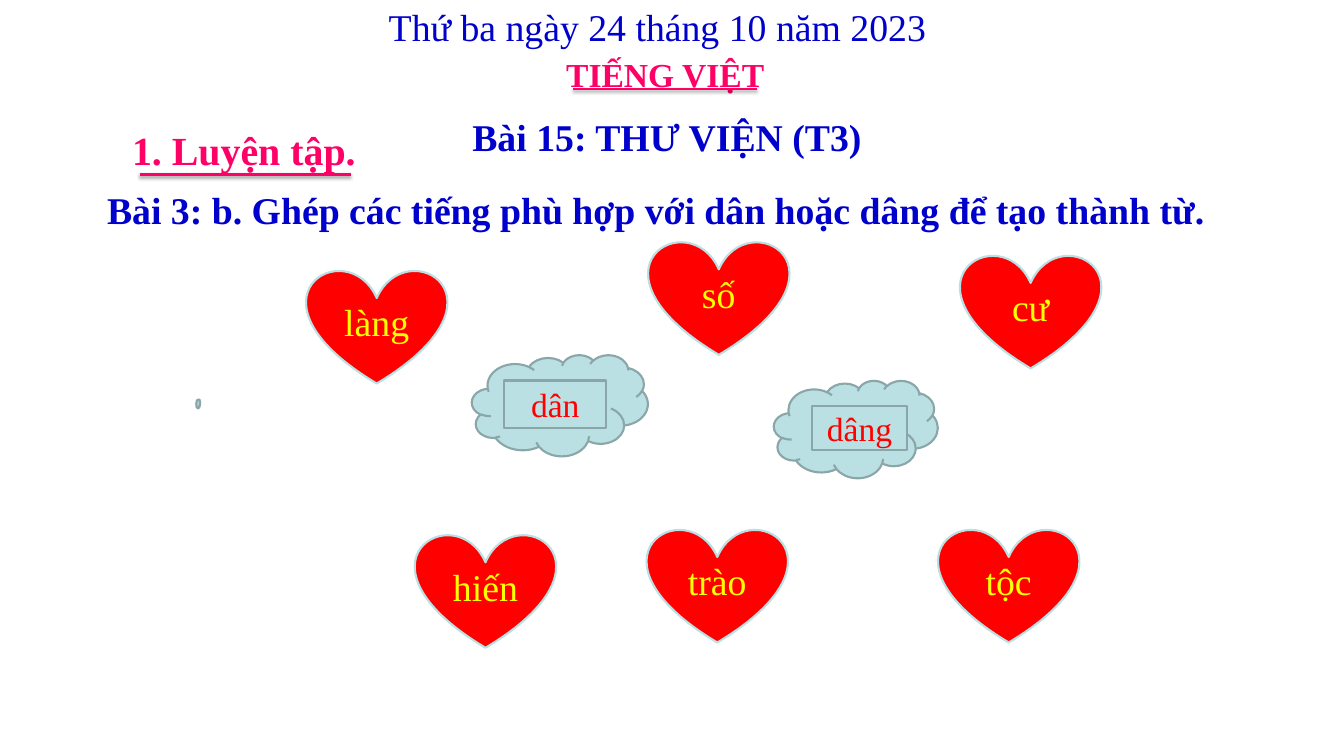
from lxml import etree
from pptx import Presentation
from pptx.dml.color import RGBColor
from pptx.enum.shapes import MSO_CONNECTOR, MSO_SHAPE
from pptx.enum.text import MSO_ANCHOR, MSO_AUTO_SIZE, PP_ALIGN
from pptx.oxml.ns import qn
from pptx.util import Inches, Pt

FONT = "Times New Roman"
COLORS = {"blue": "0000CC", "pink": "FF0066", "red": "FF0000", "yellow": "FFFF00",
          "sky": "BBE0E3", "slate": "8AA6A8", "black": "000000"}

# Content: text, place (left, top, width, height) and format
LESSON = ("Bài 15: THƯ VIỆN (T3)", (6.13, 1.46, 5.41, 0.71))
HEADINGS = [
    ("TIẾNG VIỆT", (7.4, 0.67, 2.85, 0.64), dict(size=32, color="pink", bold=True)),
    ("1. Luyện tập.", (1.65, 1.62, 4.58, 0.74),
     dict(size=38, color="pink", bold=True, wrap=True)),
    ("Bài 3: b. Ghép các tiếng phù hợp với dân hoặc dâng để tạo thành từ.",
     (1.32, 2.43, 15.73, 0.71), dict(color="blue", bold=True, wrap=True)),
    ("Thứ ba ngày 24 tháng 10 năm 2023", (5.05, 0, 7.32, 0.71), dict(color="blue")),
]
# Left, right, height on the slide, weight, shadow opacity %, shadow distance
UNDERLINES = [(7.59, 10.03, 1.18, 2, 38, 1.6), (1.85, 4.65, 2.31, 3, 35, 1.8)]
# Cloud place, then the label inside it
CLOUDS = [
    ((6.25, 4.7, 2.33, 1.34), "dân", (6.68, 5.04, 1.35, 0.63)),
    ((2.6, 5.29, 0.05, 0.12), None, None),
    ((10.25, 5.04, 2.17, 1.29), "dâng", (10.76, 5.38, 1.25, 0.58)),
]
HEART_SIZE = (1.86, 1.51)
HEARTS = [("trào", 8.57, 7), ("số", 8.59, 3.19), ("làng", 4.06, 3.57),
          ("hiến", 5.5, 7.07), ("tộc", 12.43, 7), ("cư", 12.72, 3.37)]


def rgb(name):
    return RGBColor.from_string(COLORS[name])


def inches(place):
    return [Inches(value) for value in place]


def write(frame, text, size=36, color="blue", bold=False, align=PP_ALIGN.LEFT,
          anchor=MSO_ANCHOR.TOP, wrap=False, grow=True):
    frame.word_wrap = wrap
    frame.auto_size = MSO_AUTO_SIZE.SHAPE_TO_FIT_TEXT if grow else MSO_AUTO_SIZE.NONE
    frame.vertical_anchor = anchor
    paragraph = frame.paragraphs[0]
    paragraph.alignment = align
    run = paragraph.add_run()
    run.text = text
    run.font.name, run.font.size, run.font.bold = FONT, Pt(size), bold
    run.font.color.rgb = rgb(color)


def add_figure(slide, kind, place, fill, line, text=None, **style):
    figure = slide.shapes.add_shape(kind, *inches(place))
    figure.shadow.inherit = False
    figure.fill.solid()
    figure.fill.fore_color.rgb = rgb(fill)
    figure.line.color.rgb = rgb(line)
    figure.line.width = Pt(2)
    if text:
        write(figure.text_frame, text, align=PP_ALIGN.CENTER, anchor=MSO_ANCHOR.MIDDLE,
              wrap=True, grow=False, **style)


def add_underline(slide, left, right, y, weight, opacity, distance):
    underline = slide.shapes.add_connector(
        MSO_CONNECTOR.STRAIGHT, *inches((left, y, right, y)))
    underline.line.color.rgb = rgb("pink")
    underline.line.width = Pt(weight)
    effects = etree.SubElement(underline._element.spPr, qn("a:effectLst"))
    shadow = etree.SubElement(effects, qn("a:outerShdw"), blurRad=str(Pt(3.1)),
                              dist=str(Pt(distance)), dir="5400000", rotWithShape="0")
    tint = etree.SubElement(shadow, qn("a:srgbClr"), val=COLORS["black"])
    etree.SubElement(tint, qn("a:alpha"), val=str(opacity * 1000))


def main():
    deck = Presentation()
    deck.slide_width, deck.slide_height = Inches(17.8), Inches(10)
    slide = deck.slides.add_slide(deck.slide_layouts[5])

    # Lesson title
    lesson, place = LESSON
    title = slide.shapes.title
    title.left, title.top, title.width, title.height = inches(place)
    write(title.text_frame, lesson, bold=True, align=PP_ALIGN.CENTER)

    # Date, subject and task
    for text, place, style in HEADINGS:
        write(slide.shapes.add_textbox(*inches(place)).text_frame, text, **style)
    for underline in UNDERLINES:
        add_underline(slide, *underline)

    # Clouds with the two syllables to match
    for place, syllable, label_place in CLOUDS:
        add_figure(slide, MSO_SHAPE.CLOUD, place, "sky", "slate")
        if syllable:
            add_figure(slide, MSO_SHAPE.RECTANGLE, label_place, "sky", "slate",
                       syllable, size=32, color="red")

    # Hearts with the syllables to choose from
    for syllable, left, top in HEARTS:
        add_figure(slide, MSO_SHAPE.HEART, (left, top, *HEART_SIZE), "red", "sky",
                   syllable, color="yellow")

    deck.save("out.pptx")


if __name__ == "__main__":
    main()
